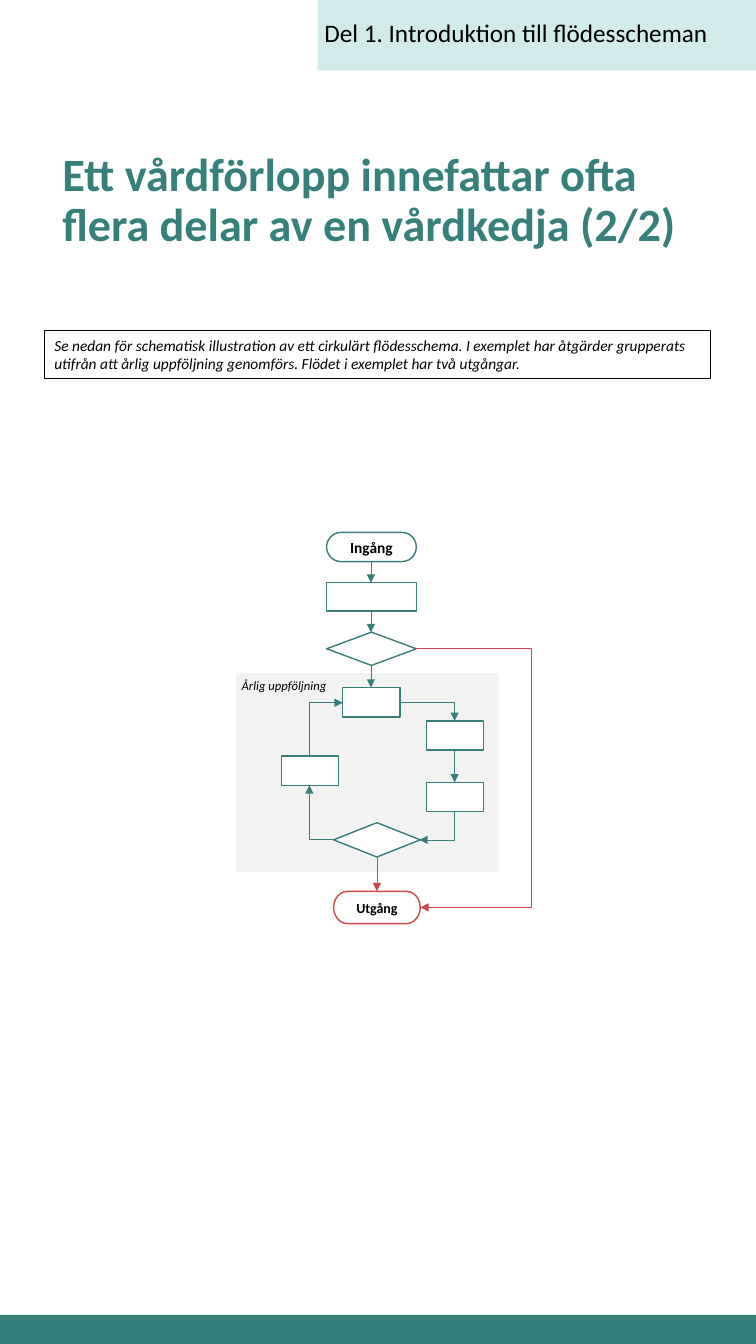
from dataclasses import dataclass, field
from typing import Any, Optional

import lxml.etree
import pptx
import pptx.dml.color
import pptx.enum.shapes
import pptx.enum.text
import pptx.oxml.ns
import pptx.util

Inches = pptx.util.Inches
Pt = pptx.util.Pt
RGB = pptx.dml.color.RGBColor.from_string
qn = pptx.oxml.ns.qn
SHAPE = pptx.enum.shapes.MSO_SHAPE
CONNECTOR = pptx.enum.shapes.MSO_CONNECTOR
ALIGN = pptx.enum.text.PP_ALIGN
ANCHOR = pptx.enum.text.MSO_ANCHOR

Point = tuple[float, float]
Box = tuple[float, float, float, float]


@dataclass(frozen=True)
class Theme:
    font: str = "Calibri"
    black: str = "000000"
    white: str = "FFFFFF"
    teal: str = "377F7A"
    flow: str = "377D7A"
    exit: str = "CF4646"
    mint: str = "D1EBEA"
    grey: str = "F2F2F2"
    title: float = 33
    header: float = 18
    body: float = 11
    exit_label: float = 10
    group_label: float = 9
    outline: float = 1
    arrow: float = 0.5


THEME = Theme()


@dataclass(frozen=True)
class Text:
    words: str
    size: float
    color: str = THEME.black
    font: dict[str, Any] = field(default_factory=dict)
    paragraph: dict[str, Any] = field(default_factory=dict)
    frame: dict[str, Any] = field(default_factory=dict)


@dataclass(frozen=True)
class Block:
    box: Box
    kind: Any = SHAPE.RECTANGLE
    fill: Optional[str] = THEME.white
    line: Optional[str] = THEME.flow
    weight: float = THEME.outline
    text: Optional[Text] = None


@dataclass(frozen=True)
class Label:
    box: Box
    text: Text


@dataclass(frozen=True)
class Arrow:
    start: Point
    end: Point
    route: str = "straight"
    color: str = THEME.flow
    via_x: float = 0


def apply(target: Any, values: dict[str, Any]) -> None:
    for name, value in values.items():
        setattr(target, name, value)


def write(tf: Any, text: Text) -> None:
    apply(tf, {"word_wrap": True, **text.frame})
    p = tf.paragraphs[0]
    apply(p, {"alignment": ALIGN.LEFT, **text.paragraph})
    r = p.add_run()
    r.text = text.words
    apply(r.font, {"name": THEME.font, "size": Pt(text.size), **text.font})
    r.font.color.rgb = RGB(text.color)


def draw_block(s: Any, block: Block) -> None:
    sp = s.shapes.add_shape(block.kind, *map(Inches, block.box))
    sp.shadow.inherit = False
    if block.fill:
        sp.fill.solid()
        sp.fill.fore_color.rgb = RGB(block.fill)
    else:
        sp.fill.background()
    if block.line:
        sp.line.color.rgb = RGB(block.line)
        sp.line.width = Pt(block.weight)
    else:
        sp.line.fill.background()
    if block.text:
        write(sp.text_frame, block.text)


def draw_label(s: Any, label: Label) -> None:
    write(s.shapes.add_textbox(*map(Inches, label.box)).text_frame, label.text)


def turn_back(point: Point, center: Point) -> Point:
    dx, dy = point[0] - center[0], point[1] - center[1]
    return center[0] + dy, center[1] - dx


def draw_arrow(s: Any, arrow: Arrow) -> None:
    start, end = arrow.start, arrow.end
    vertical_first = arrow.route == "vertical"
    if vertical_first:
        center = (start[0] + end[0]) / 2, (start[1] + end[1]) / 2
        start, end = turn_back(start, center), turn_back(end, center)
    kind = CONNECTOR.STRAIGHT if arrow.route == "straight" else CONNECTOR.ELBOW
    sp = s.shapes.add_connector(kind, *map(Inches, (*start, *end)))
    sp.line.color.rgb = RGB(arrow.color)
    sp.line.width = Pt(THEME.arrow)
    props = sp._element.spPr
    geometry = props.find(qn("a:prstGeom"))
    if arrow.route in ("horizontal", "vertical"):
        geometry.set("prst", "bentConnector2")
    if vertical_first:
        props.find(qn("a:xfrm")).set("rot", "5400000")
    if arrow.route == "detour":
        ratio = (arrow.via_x - start[0]) / (end[0] - start[0])
        lxml.etree.SubElement(geometry.find(qn("a:avLst")), qn("a:gd"),
                              name="adj1", fmla=f"val {round(ratio * 100000)}")
    lxml.etree.SubElement(props.find(qn("a:ln")), qn("a:tailEnd"), type="triangle")
    lxml.etree.SubElement(props, qn("a:effectLst"))


def terminal(words: str, size: float) -> Text:
    margins = {f"margin_{side}": 0 for side in ("left", "top", "right", "bottom")}
    return Text(words, size, font={"bold": True}, paragraph={"alignment": ALIGN.CENTER},
                frame={"vertical_anchor": ANCHOR.MIDDLE, **margins})


INTRO = Text(
    "Se nedan för schematisk illustration av ett cirkulärt flödesschema. I exemplet har "
    "åtgärder grupperats utifrån att årlig uppföljning genomförs. Flödet i exemplet har "
    "två utgångar.",
    THEME.body, font={"italic": True}, frame={"vertical_anchor": ANCHOR.TOP})

BACKDROP = [
    Block((0, 13.04, 7.5, 0.29), fill=THEME.teal, line=None),
    Block((3.15, 0, 4.35, 0.7), fill=THEME.mint, line=None),
    Block((0.44, 3.28, 6.61, 0.47), fill=None, line=THEME.black, weight=0.75, text=INTRO),
    Block((2.33, 6.67, 2.63, 1.99), fill=THEME.grey, line=THEME.white),
]

LABELS = [
    Label((3.12, 0.12, 4.89, 0.4),
          Text("Del 1. Introduktion till flödesscheman", THEME.header)),
    Label((0.52, 0.71, 6.47, 2.58),
          Text("Ett vårdförlopp innefattar ofta flera delar av en vårdkedja (2/2)",
               THEME.title, THEME.teal, {"bold": True}, {"line_spacing": 0.9},
               {"vertical_anchor": ANCHOR.MIDDLE})),
    Label((2.3, 6.67, 1.06, 0.25),
          Text("Årlig uppföljning", THEME.group_label, font={"italic": True},
               frame={"word_wrap": False})),
]

YEARLY_STEPS = [(3.4, 6.82), (4.23, 7.15), (4.23, 7.76), (2.79, 7.5)]

FLOW = [
    Block((3.24, 5.28, 0.89, 0.29), SHAPE.FLOWCHART_TERMINATOR,
          text=terminal("Ingång", THEME.body)),
    Block((3.24, 5.78, 0.89, 0.28)),
    Block((3.24, 6.27, 0.89, 0.33), SHAPE.FLOWCHART_DECISION),
    *[Block((x, y, 0.57, 0.29)) for x, y in YEARLY_STEPS],
    Block((3.31, 8.16, 0.86, 0.34), SHAPE.FLOWCHART_DECISION),
    Block((3.31, 8.84, 0.86, 0.32), SHAPE.FLOWCHART_TERMINATOR, line=THEME.exit,
          text=terminal("Utgång", THEME.exit_label)),
]

ARROWS = [
    *[Arrow((3.68, top), (3.68, bottom))
      for top, bottom in [(5.57, 5.78), (6.06, 6.27), (6.6, 6.82)]],
    Arrow((4.51, 7.44), (4.51, 7.76)),
    Arrow((3.97, 6.97), (4.51, 7.15), "horizontal"),
    Arrow((4.51, 8.05), (4.16, 8.33), "vertical"),
    Arrow((3.31, 8.33), (3.07, 7.79), "horizontal"),
    Arrow((3.07, 7.5), (3.4, 6.97), "vertical"),
    Arrow((3.74, 8.5), (3.74, 8.84), color=THEME.exit),
    Arrow((4.13, 6.43), (4.17, 9), "detour", THEME.exit, via_x=5.27),
]


def main() -> None:
    prs = pptx.Presentation()
    apply(prs, {"slide_width": Inches(7.5), "slide_height": Inches(13.33)})
    s = prs.slides.add_slide(prs.slide_layouts[6])
    for block in BACKDROP:
        draw_block(s, block)
    for label in LABELS:
        draw_label(s, label)
    for block in FLOW:
        draw_block(s, block)
    for arrow in ARROWS:
        draw_arrow(s, arrow)
    prs.save("out.pptx")


if __name__ == "__main__":
    main()
